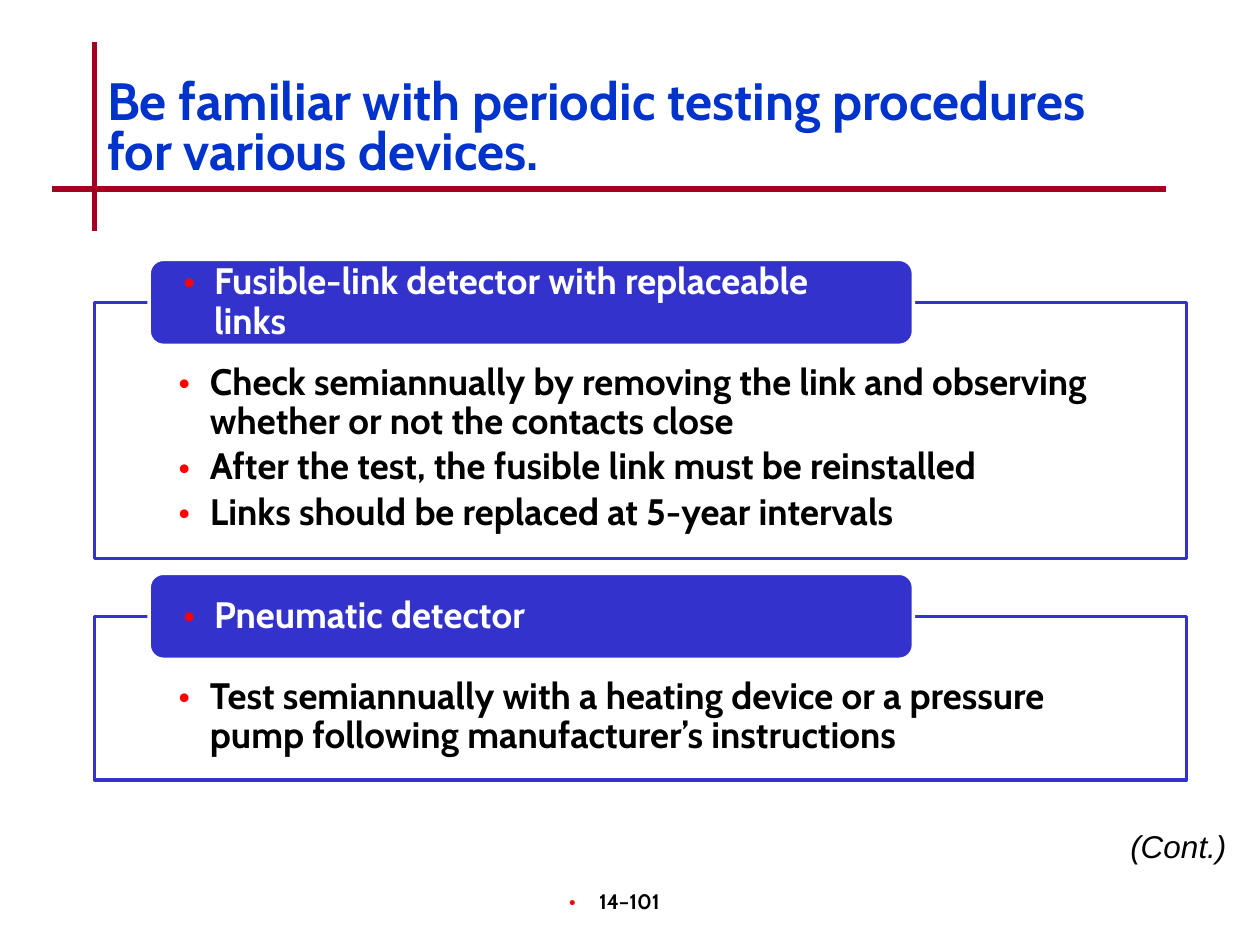
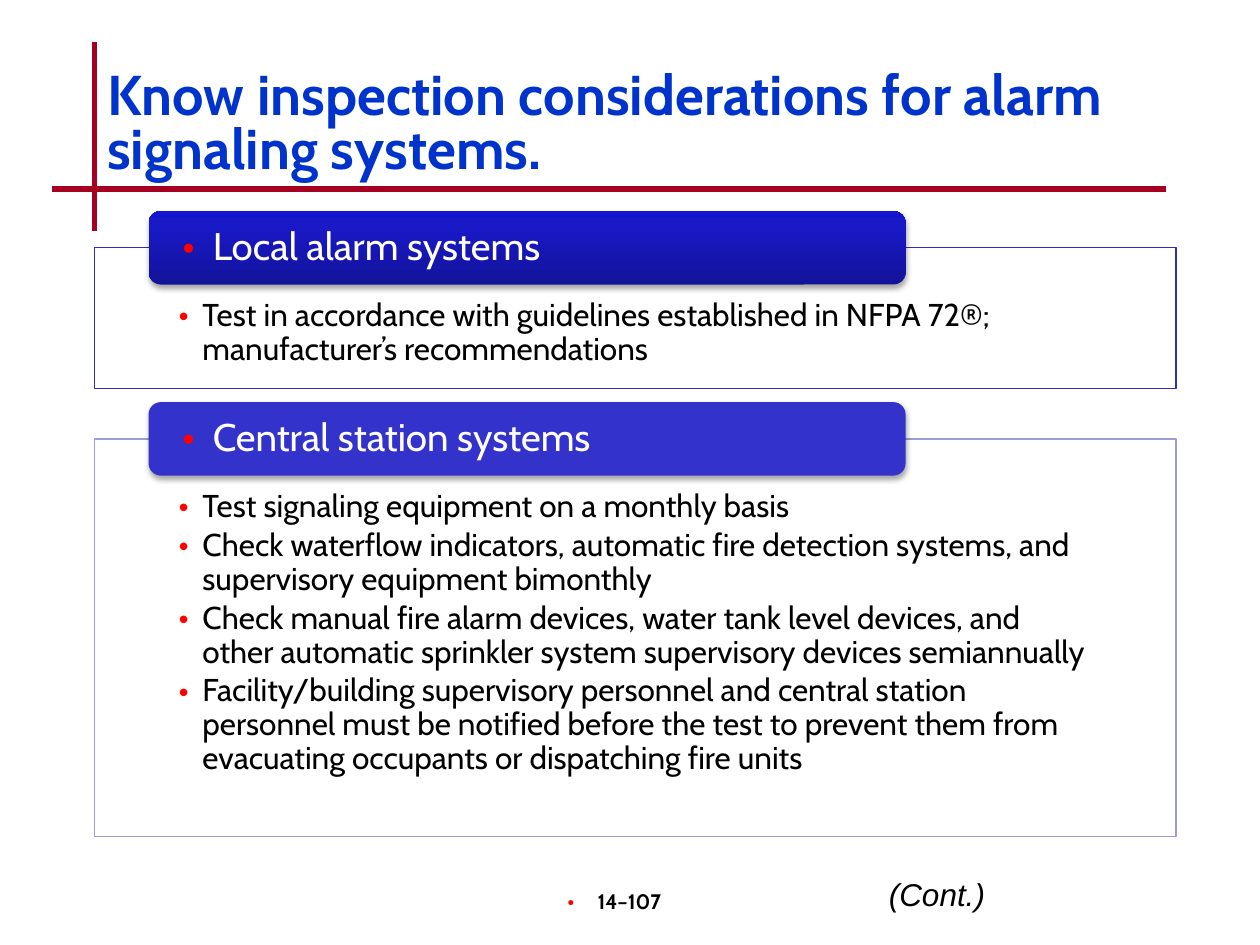
"""Builds two fire-alarm testing slides with titled list panels."""
from copy import deepcopy
from dataclasses import dataclass

from pptx import Presentation
from pptx.dml.color import RGBColor
from pptx.enum.shapes import MSO_CONNECTOR, MSO_SHAPE
from pptx.enum.text import MSO_ANCHOR, MSO_AUTO_SIZE, PP_ALIGN
from pptx.oxml import parse_xml
from pptx.oxml.ns import nsdecls, qn
from pptx.util import Inches, Pt


@dataclass(frozen=True)
class Theme:
    font: str = "Cabin"
    plain: str = "Arial"
    title: str = "0033CC"
    rule: str = "A50021"
    tab: str = "3333CC"
    dot: str = "FF0000"
    ink: str = "000000"
    paper: str = "FFFFFF"
    glow: tuple = ((0, "13139A"), (0.8, "1919C8"), (1, "1515CC"))
    page: int = 12
    note: int = 18


THEME = Theme()
COLS, ROWS = 120, 90
WIDTH, HEIGHT = Inches(10), Inches(7.5)
LEFT = 9
RULES = [(9, 4, 9, 22), (5, 18, 111, 18)]

SLIDES = [
    dict(
        title="Be familiar with periodic testing procedures for various devices.",
        head=30, rise=6.4, page="14–101", note=(98, 78.2),
        top=28.8, wide=104, gap=5.5, tall=8.2, pad=5.8,
        tab=21, list=21, bold=True, hang=0.25, edge=2, soft=False,
        panels=[
            dict(name="Fusible-link detector with replaceable links", rows=24.4,
                 line="3333CC", glow=False, items=[
                     "Check semiannually by removing the link and observing whether or not the contacts close",
                     "After the test, the fusible link must be reinstalled",
                     "Links should be replaced at 5-year intervals"]),
            dict(name="Pneumatic detector", rows=15.6,
                 line="3333CC", glow=False, items=[
                     "Test semiannually with a heating device or a pressure pump following manufacturer’s instructions"]),
        ]),
    dict(
        title="Know inspection considerations for alarm signaling systems.",
        head=32, rise=6, page="14–107", note=(75, 82.7),
        top=23.6, wide=103, gap=4.8, tall=7, pad=4.9,
        tab=22, list=18, bold=False, hang=0.19, edge=0.75, soft=True,
        panels=[
            dict(name="Local alarm systems", rows=13.4,
                 line="2E2EB9", glow=True, items=[
                     "Test in accordance with guidelines established in NFPA 72®; manufacturer’s recommendations"]),
            dict(name="Central station systems", rows=37.9,
                 line="9C9CDD", glow=False, items=[
                     "Test signaling equipment on a monthly basis",
                     "Check waterflow indicators, automatic fire detection systems, and supervisory equipment bimonthly",
                     "Check manual fire alarm devices, water tank level devices, and other automatic sprinkler system supervisory devices semiannually",
                     "Facility/building supervisory personnel and central station personnel must be notified before the test to prevent them from evacuating occupants or dispatching fire units"]),
        ]),
]


def grid(x, y, w, h):
    """Turns columns and rows into slide lengths."""
    return [int(n * size / count) for n, size, count in
            ((x, WIDTH, COLS), (y, HEIGHT, ROWS), (w, WIDTH, COLS), (h, HEIGHT, ROWS))]


def write(shape, lines, size, color=THEME.ink, font=THEME.font, bold=False,
          italic=False, align=PP_ALIGN.LEFT, anchor=MSO_ANCHOR.TOP,
          pad=(1.2, 0.6, 1.2, 0.6), hang=0, space=1, after=0):
    """Fills a shape with formatted paragraphs."""
    frame = shape.text_frame
    frame.word_wrap = True
    frame.auto_size = MSO_AUTO_SIZE.NONE
    frame.vertical_anchor = anchor
    (frame.margin_left, frame.margin_top,
     frame.margin_right, frame.margin_bottom) = grid(*pad)
    for i, line in enumerate(lines):
        para = frame.paragraphs[0] if i == 0 else frame.add_paragraph()
        props = para._p.get_or_add_pPr()
        props.set("marL", str(Inches(hang)))
        props.set("indent", str(-Inches(hang)))
        if hang:
            for mark in (f'<a:buClr {nsdecls("a")}><a:srgbClr val="{THEME.dot}"/></a:buClr>',
                         f'<a:buSzPct {nsdecls("a")} val="110000"/>',
                         f'<a:buFont {nsdecls("a")} typeface="{THEME.font}"/>',
                         f'<a:buChar {nsdecls("a")} char="•"/>'):
                props.append(parse_xml(mark))
        para.alignment = align
        para.line_spacing = space
        para.space_before = Pt(0)
        para.space_after = Pt(after)
        run = para.add_run()
        run.text = line
        run.font.name = font
        run.font.size = Pt(size)
        run.font.bold = bold
        run.font.italic = italic
        run.font.color.rgb = RGBColor.from_string(color)


deck = Presentation()
deck.slide_width, deck.slide_height = WIDTH, HEIGHT

for data in SLIDES:
    slide = deck.slides.add_slide(deck.slide_layouts[3])
    shapes = slide.shapes
    for x, y, end, low in RULES:
        rule = shapes.add_connector(MSO_CONNECTOR.STRAIGHT, *grid(x, y, end, low))
        rule.line.color.rgb = RGBColor.from_string(THEME.rule)
        rule.line.width = Pt(3)
        rule._element.spPr.append(parse_xml(f'<a:effectLst {nsdecls("a")}/>'))

    title = shapes.title
    title.left, title.top, title.width, title.height = grid(LEFT, data["rise"], 102, 12)
    write(title, [data["title"]], data["head"], color=THEME.title, bold=True,
          anchor=MSO_ANCHOR.MIDDLE, space=0.8)

    top, wide, tall = data["top"], data["wide"], data["tall"]
    for spot, panel in enumerate(data["panels"], 1):
        body = slide.placeholders[spot]
        body.left, body.top, body.width, body.height = grid(LEFT, top, wide, panel["rows"])
        body.fill.solid()
        body.fill.fore_color.rgb = RGBColor.from_string(THEME.paper)
        shade = body._element.spPr.find(qn("a:solidFill"))[0]
        shade.append(parse_xml(f'<a:alpha {nsdecls("a")} val="90000"/>'))
        body.line.color.rgb = RGBColor.from_string(panel["line"])
        body.line.width = Pt(data["edge"])
        write(body, panel["items"], data["list"], bold=data["bold"], hang=data["hang"],
              pad=(8, data["pad"], 8, 1.8), space=0.9, after=0.15 * data["list"])

        tab = shapes.add_shape(MSO_SHAPE.ROUNDED_RECTANGLE, *grid(
            LEFT + 0.05 * wide, top - tall / 2, 0.7 * wide, tall))
        tab.shadow.inherit = False
        if panel["glow"]:
            tab.fill.gradient()
            tab.fill.gradient_angle = 90
            stops = tab._element.spPr.find(qn("a:gradFill")).find(qn("a:gsLst"))
            stops.append(deepcopy(stops[-1]))
            for stop, (place, color) in zip(tab.fill.gradient_stops, THEME.glow):
                stop.position = place
                stop.color.rgb = RGBColor.from_string(color)
        else:
            tab.fill.solid()
            tab.fill.fore_color.rgb = RGBColor.from_string(THEME.tab)
        if data["soft"]:
            tab.line.fill.background()
            tab._element.spPr.find(qn("a:effectLst")).append(parse_xml(
                f'<a:outerShdw {nsdecls("a")} blurRad="{Pt(3.1)}" dist="{Pt(1.8)}" '
                'dir="5400000" rotWithShape="0"><a:srgbClr val="000000">'
                '<a:alpha val="35000"/></a:srgbClr></a:outerShdw>'))
        else:
            tab.line.color.rgb = RGBColor.from_string(THEME.paper)
            tab.line.width = Pt(data["edge"])
        write(tab, [panel["name"]], data["tab"], color=THEME.paper, bold=data["bold"],
              anchor=MSO_ANCHOR.MIDDLE, pad=(2.9, 0, 2.9, 0), hang=0.24, space=0.9)
        top += panel["rows"] + data["gap"]

    page = shapes.add_textbox(*grid(46, 84, 25, 6))
    write(page, [data["page"]], THEME.page, bold=True, align=PP_ALIGN.CENTER, hang=0.24)
    note = shapes.add_textbox(*grid(*data["note"], 20, 4.8))
    write(note, ["(Cont.)"], THEME.note, font=THEME.plain, italic=True, align=PP_ALIGN.RIGHT)

deck.save("out.pptx")
